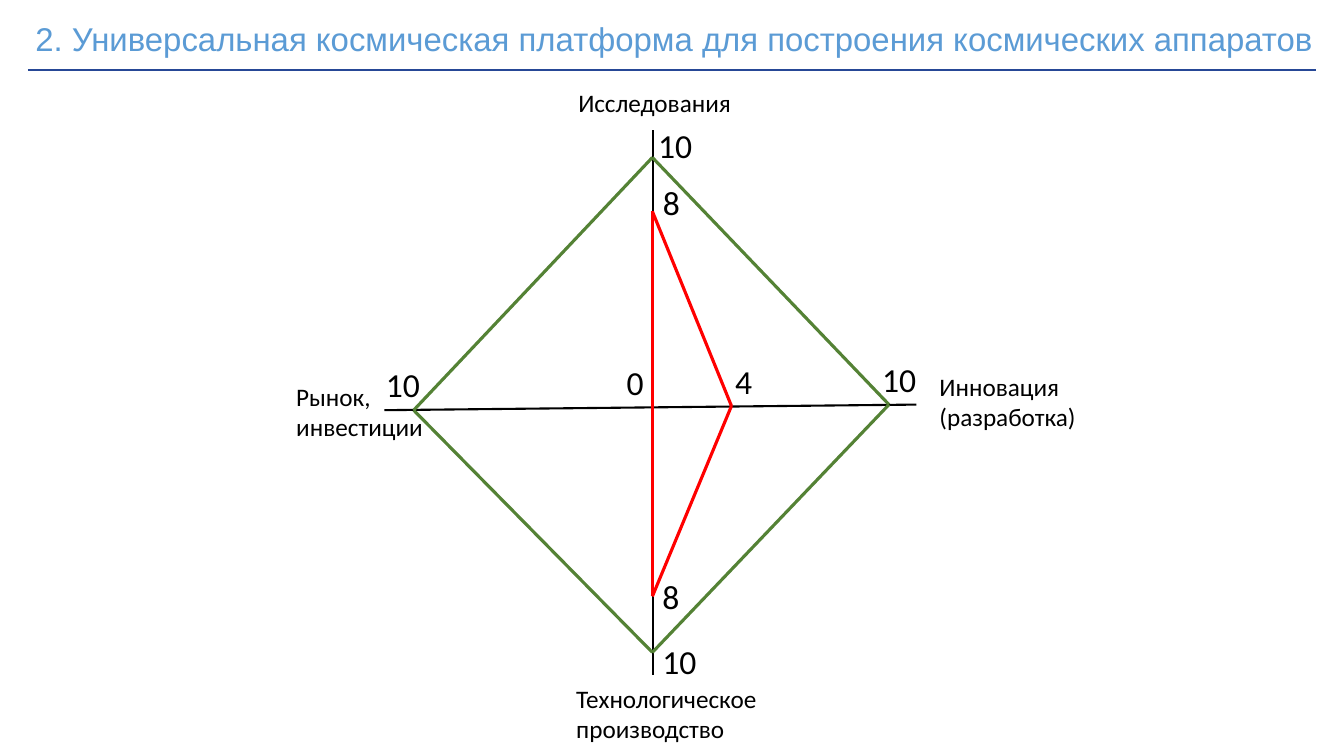
import pptx
import pptx.util
import pptx.dml.color
import pptx.enum.shapes
import pptx.enum.text
import lxml.etree

Pt = pptx.util.Pt
COLORS = {"title": "5B9BD5", "rule": "264796", "axis": "000000",
          "text": "000000", "maximum": "548235", "project": "FF0000"}


def write_text(sp, text, size, font="Calibri", color="text", wrap=False):
    tf = sp.text_frame
    tf.word_wrap = wrap
    tf.auto_size = pptx.enum.text.MSO_AUTO_SIZE.NONE
    for i, line in enumerate(text.split("\n")):
        p = tf.paragraphs[0] if i == 0 else tf.add_paragraph()
        p.alignment = pptx.enum.text.PP_ALIGN.LEFT
        r = p.add_run()
        r.text = line
        r.font.size = Pt(size)
        r.font.name = font
        r.font.color.rgb = pptx.dml.color.RGBColor.from_string(COLORS[color])


def add_line(start, end, color, width):
    c = s.shapes.add_connector(pptx.enum.shapes.MSO_CONNECTOR.STRAIGHT,
                               Pt(start[0]), Pt(start[1]), Pt(end[0]), Pt(end[1]))
    c.line.color.rgb = pptx.dml.color.RGBColor.from_string(COLORS[color])
    c.line.width = Pt(width)
    lxml.etree.SubElement(c._element.spPr, pptx.oxml.ns.qn("a:effectLst"))


prs = pptx.Presentation()
prs.slide_width, prs.slide_height = Pt(960), Pt(540)
s = prs.slides.add_slide(prs.slide_layouts[5])

# Title with a rule below
title = s.shapes.title
title.left, title.top, title.width, title.height = Pt(18), Pt(9.5), Pt(962.5), Pt(36)
write_text(title, "2. Универсальная космическая платформа для построения космических аппаратов",
           23.5, font="Arial", color="title", wrap=True)
add_line((20, 50), (940, 50), "rule", 1.5)

# Axes
add_line((466.5, 93), (466.5, 482.5), "axis", 1.5)
add_line((274.5, 293), (654.5, 289), "axis", 1.5)

# Closed outlines: project values, then maximum values
outlines = [
    ("project", [(466, 151), (522.5, 290), (466, 426)]),
    ("maximum", [(466, 112.5), (635, 289), (466, 466), (295.5, 293)]),
]
for color, points in outlines:
    for start, end in zip(points, points[1:] + points[:1]):
        add_line(start, end, color, 2.25)

# Axis names: text, left, top, width, height
names = [
    ("Исследования", 406, 58.5, 124.5, 29),
    ("Инновация\n(разработка)", 664, 261.5, 113, 51),
    ("Технологическое\nпроизводство", 404.5, 484.5, 149, 51),
    ("Рынок,\nинвестиции", 204.5, 268.5, 106, 51),
]
for text, left, top, width, height in names:
    sp = s.shapes.add_textbox(Pt(left), Pt(top), Pt(width), Pt(height))
    write_text(sp, text, 18)

# Scale values: text, left, top
values = [
    ("10", 463, 85.5), ("8", 466.5, 126.5), ("0", 440.5, 255), ("4", 518, 254),
    ("10", 623, 252.5), ("10", 268.5, 256.5), ("8", 466, 408), ("10", 466, 454),
]
for text, left, top in values:
    sp = s.shapes.add_textbox(Pt(left), Pt(top), Pt(14.5 + 12.2 * len(text)), Pt(36))
    write_text(sp, text, 24)

prs.save("out.pptx")
